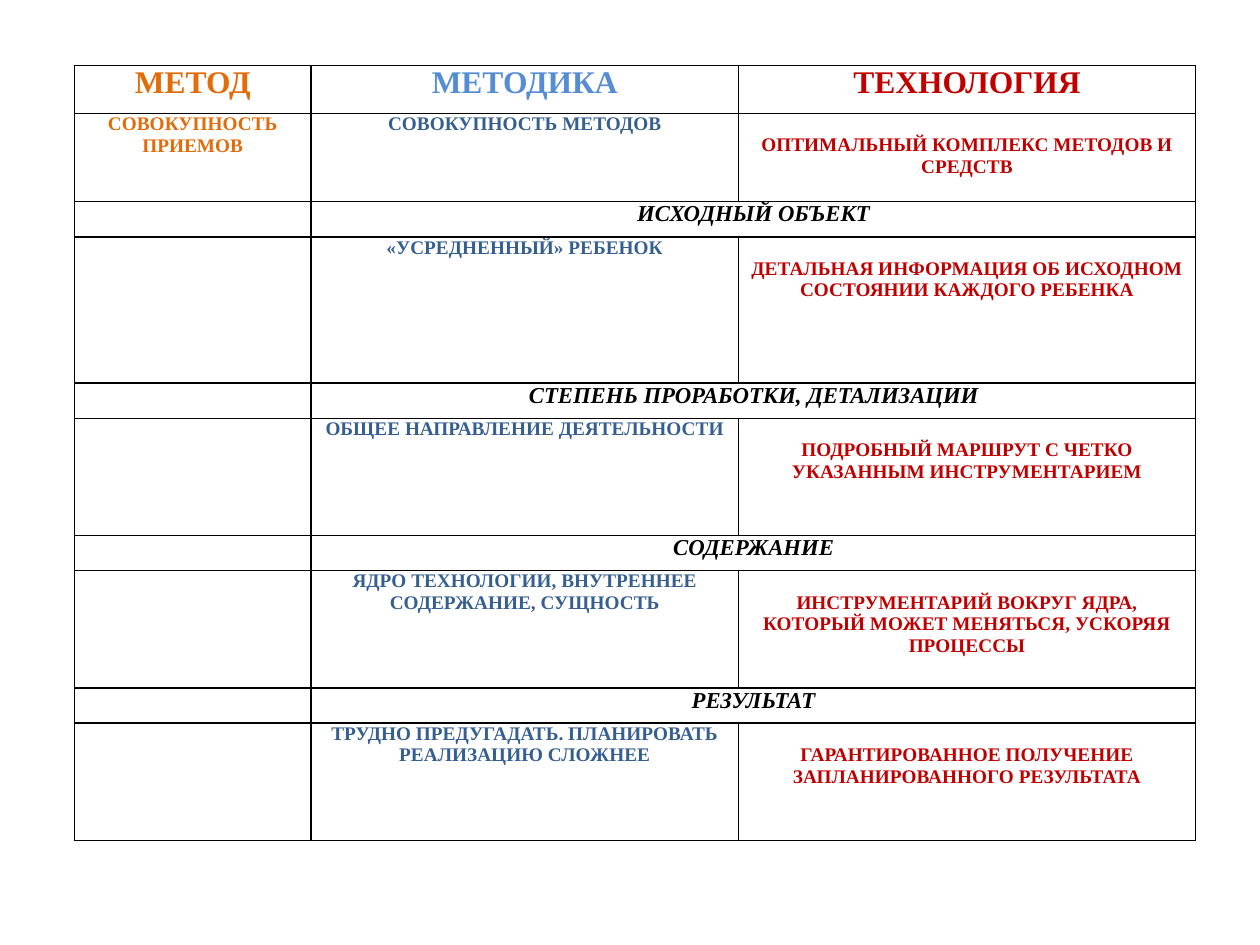
import dataclasses

import lxml.etree
import pptx
import pptx.dml.color
import pptx.enum.text
import pptx.oxml.ns
import pptx.util

Inches = pptx.util.Inches
Pt = pptx.util.Pt


@dataclasses.dataclass(frozen=True)
class Theme:
    font: str = "Times New Roman"
    black: str = "000000"
    orange: str = "E36C0A"
    light_blue: str = "548DD4"
    dark_blue: str = "365F91"
    red: str = "C00000"
    heading: int = 18
    section: int = 13
    body: int = 11
    border: int = 1
    side_inset: float = 0.04
    line_inset: float = 0.17  # one body line, drops the third column


class SlideBuilder:
    def __init__(self, slide, theme):
        self.slide = slide
        self.theme = theme

    def table(self, left, top, widths, heights):
        frame = self.slide.shapes.add_table(
            len(heights), len(widths), Inches(left), Inches(top),
            Inches(sum(widths)), Inches(sum(heights)))
        grid = frame.table
        grid.first_row = grid.horz_banding = False
        for column, width in zip(grid.columns, widths):
            column.width = Inches(width)
        for row, height in zip(grid.rows, heights):
            row.height = Inches(height)
            for cell in row.cells:
                self.plain_cell(cell)
        return grid

    def plain_cell(self, cell):
        """Clear fill, thin insets, black borders and a small empty line."""
        cell.margin_left = cell.margin_right = Inches(self.theme.side_inset)
        cell.margin_top = cell.margin_bottom = 0
        qn = pptx.oxml.ns.qn
        properties = cell._tc.get_or_add_tcPr()
        for side in ("a:lnL", "a:lnR", "a:lnT", "a:lnB"):
            line = lxml.etree.SubElement(
                properties, qn(side), w=str(Pt(self.theme.border)))
            fill = lxml.etree.SubElement(line, qn("a:solidFill"))
            lxml.etree.SubElement(fill, qn("a:srgbClr"), val=self.theme.black)
        cell.fill.background()
        paragraph = cell.text_frame.paragraphs[0]
        lxml.etree.SubElement(paragraph._p, qn("a:endParaRPr"),
                              sz=str(self.theme.body * 100))

    def cell_text(self, cell, text, size, color, italic=False, top=0):
        cell.margin_top = Inches(top)
        paragraph = cell.text_frame.paragraphs[0]
        paragraph.alignment = pptx.enum.text.PP_ALIGN.CENTER
        run = paragraph.add_run()
        run.text = text
        run.font.name = self.theme.font
        run.font.size = Pt(size)
        run.font.bold = True
        run.font.italic = italic
        run.font.color.rgb = pptx.dml.color.RGBColor.from_string(color)


# Each section: title, methodology, technology, height of its detail row
SECTIONS = [
    ("ИСХОДНЫЙ ОБЪЕКТ", "«УСРЕДНЕННЫЙ» РЕБЕНОК",
     "ДЕТАЛЬНАЯ ИНФОРМАЦИЯ ОБ ИСХОДНОМ СОСТОЯНИИ КАЖДОГО РЕБЕНКА", 1.16),
    ("СТЕПЕНЬ ПРОРАБОТКИ, ДЕТАЛИЗАЦИИ", "ОБЩЕЕ НАПРАВЛЕНИЕ ДЕЯТЕЛЬНОСТИ",
     "ПОДРОБНЫЙ МАРШРУТ С ЧЕТКО УКАЗАННЫМ ИНСТРУМЕНТАРИЕМ", 0.93),
    ("СОДЕРЖАНИЕ", "ЯДРО ТЕХНОЛОГИИ, ВНУТРЕННЕЕ СОДЕРЖАНИЕ, СУЩНОСТЬ",
     "ИНСТРУМЕНТАРИЙ ВОКРУГ ЯДРА, КОТОРЫЙ МОЖЕТ МЕНЯТЬСЯ, УСКОРЯЯ ПРОЦЕССЫ",
     0.93),
    ("РЕЗУЛЬТАТ", "ТРУДНО ПРЕДУГАДАТЬ. ПЛАНИРОВАТЬ РЕАЛИЗАЦИЮ СЛОЖНЕЕ",
     "ГАРАНТИРОВАННОЕ ПОЛУЧЕНИЕ ЗАПЛАНИРОВАННОГО РЕЗУЛЬТАТА", 0.93),
]


def main():
    deck = pptx.Presentation()
    deck.slide_width, deck.slide_height = Inches(10), Inches(7.5)
    theme = Theme()
    builder = SlideBuilder(deck.slides.add_slide(deck.slide_layouts[6]), theme)

    # Comparison grid
    heights = [0.38, 0.7]
    for section in SECTIONS:
        heights += [0.28, section[-1]]
    comparison = builder.table(0.59, 0.52, [1.88, 3.39, 3.63], heights)

    # Column headings
    headings = [("МЕТОД", theme.orange), ("МЕТОДИКА", theme.light_blue),
                ("ТЕХНОЛОГИЯ", theme.red)]
    for column, (heading, color) in enumerate(headings):
        builder.cell_text(comparison.cell(0, column), heading, theme.heading,
                          color)

    # Definitions and section details share the column styles
    def fill_details(row, method, methodology, technology):
        details = [(method, theme.orange, 0), (methodology, theme.dark_blue, 0),
                   (technology, theme.red, theme.line_inset)]
        for column, (text, color, top) in enumerate(details):
            if text:
                builder.cell_text(comparison.cell(row, column), text,
                                  theme.body, color, top=top)

    fill_details(1, "СОВОКУПНОСТЬ ПРИЕМОВ", "СОВОКУПНОСТЬ МЕТОДОВ",
                 "ОПТИМАЛЬНЫЙ КОМПЛЕКС МЕТОДОВ И СРЕДСТВ")

    # Sections: a merged title row, then a detail row
    for index, (title, methodology, technology, _) in enumerate(SECTIONS):
        row = 2 + 2 * index
        title_cell = comparison.cell(row, 1)
        title_cell.merge(comparison.cell(row, 2))
        builder.cell_text(title_cell, title, theme.section, theme.black,
                          italic=True)
        fill_details(row + 1, None, methodology, technology)

    deck.save("out.pptx")


if __name__ == "__main__":
    main()
